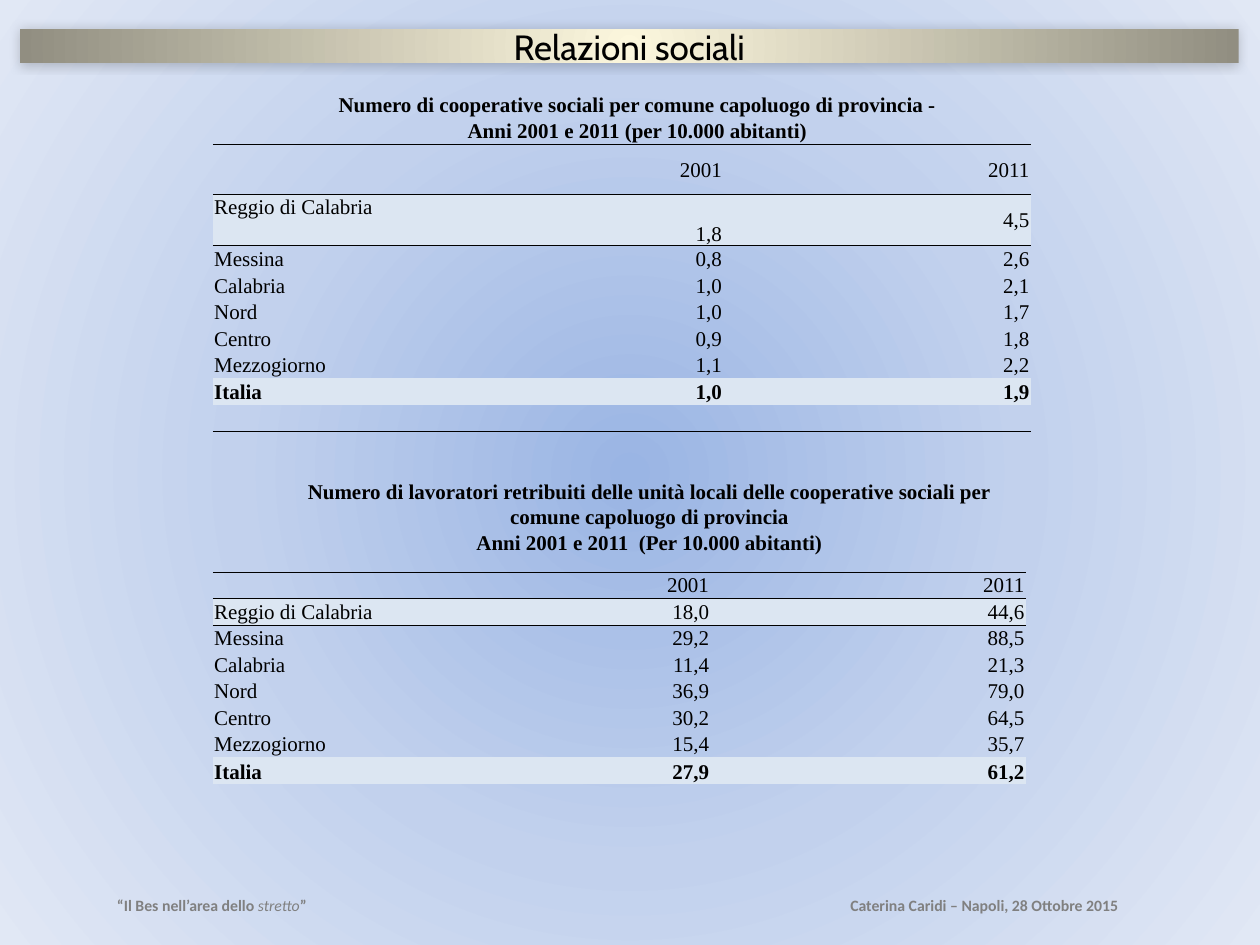
from lxml import etree
from pptx import Presentation
from pptx.dml.color import RGBColor
from pptx.enum.text import MSO_ANCHOR, MSO_AUTO_SIZE, PP_ALIGN
from pptx.oxml import parse_xml
from pptx.oxml.ns import nsdecls, qn
from pptx.util import Emu, Inches, Pt

COLORS = {"text": "000000", "footer": "808080", "highlight": "DCE6F2", "rule": "000000"}
BACKGROUND_STOPS = [(0, "9AB5E4"), (50, "C2D1ED"), (100, "E1E8F5")]
BANNER_STOPS = [(0, "FCF7DD"), (100, "918E81")]
WIDTH, HEIGHT = Inches(10), Inches(7.5)
ROW = Inches(0.21)
NO_GRID_STYLE = "{2D5ABB26-0587-4C30-8999-92F81FD0307C}"
TOP, MIDDLE, BOTTOM = MSO_ANCHOR.TOP, MSO_ANCHOR.MIDDLE, MSO_ANCHOR.BOTTOM

COOPERATIVES = [
    ("", "2001", "2011"),
    ("Reggio di Calabria", "1,8", "4,5"),
    ("Messina", "0,8", "2,6"),
    ("Calabria", "1,0", "2,1"),
    ("Nord", "1,0", "1,7"),
    ("Centro", "0,9", "1,8"),
    ("Mezzogiorno", "1,1", "2,2"),
    ("Italia", "1,0", "1,9"),
    ("", "", ""),
]
WORKERS = [
    ("", "2001", "2011"),
    ("Reggio di Calabria", "18,0", "44,6"),
    ("Messina", "29,2", "88,5"),
    ("Calabria", "11,4", "21,3"),
    ("Nord", "36,9", "79,0"),
    ("Centro", "30,2", "64,5"),
    ("Mezzogiorno", "15,4", "35,7"),
    ("Italia", "27,9", "61,2"),
]


def box(left, top, width, height):
    """Turn percentages of the slide into a box."""
    return (Emu(int(WIDTH * left / 100)), Emu(int(HEIGHT * top / 100)),
            Emu(int(WIDTH * width / 100)), Emu(int(HEIGHT * height / 100)))


def set_radial_fill(fill, properties, stops):
    """Swap a solid fill for a gradient that spreads from the centre."""
    fill.solid()
    marks = "".join(f'<a:gs pos="{share * 1000}"><a:srgbClr val="{color}"/></a:gs>'
                    for share, color in stops)
    gradient = parse_xml(
        f'<a:gradFill {nsdecls("a")} rotWithShape="1"><a:gsLst>{marks}</a:gsLst>'
        '<a:path path="circle"><a:fillToRect l="50000" t="50000" r="50000" b="50000"/>'
        '</a:path></a:gradFill>')
    properties.replace(properties.find(qn("a:solidFill")), gradient)


def add_run(paragraph, text, font, size, color="text", bold=False, italic=False):
    run = paragraph.add_run()
    run.text = text
    run.font.name, run.font.size = font, Pt(size)
    run.font.bold, run.font.italic = bold, italic
    run.font.color.rgb = RGBColor.from_string(COLORS[color])


def add_banner(slide, area, heading):
    banner = slide.shapes.title
    banner.left, banner.top, banner.width, banner.height = area
    properties = banner._element.spPr
    properties.append(parse_xml(
        f'<a:prstGeom {nsdecls("a")} prst="trapezoid"><a:avLst>'
        '<a:gd name="adj" fmla="val 20000"/></a:avLst></a:prstGeom>'))
    set_radial_fill(banner.fill, properties, BANNER_STOPS)
    banner.line.fill.background()
    properties.append(parse_xml(
        f'<a:effectLst {nsdecls("a")}><a:outerShdw blurRad="76200" dist="12700" dir="8100000">'
        '<a:srgbClr val="000000"><a:alpha val="20000"/></a:srgbClr></a:outerShdw></a:effectLst>'))
    frame = banner.text_frame
    frame.auto_size, frame.vertical_anchor = MSO_AUTO_SIZE.NONE, MIDDLE
    frame.margin_top = frame.margin_bottom = 0
    frame.paragraphs[0].alignment = PP_ALIGN.CENTER
    add_run(frame.paragraphs[0], heading, "Cabin", 20)


def add_text_frame(shapes, area):
    frame = shapes.add_textbox(*area).text_frame
    frame.word_wrap, frame.auto_size = True, MSO_AUTO_SIZE.SHAPE_TO_FIT_TEXT
    return frame


def add_caption(slide, area, lines):
    frame = add_text_frame(slide.shapes, area)
    for index, line in enumerate(lines):
        paragraph = frame.add_paragraph() if index else frame.paragraphs[0]
        paragraph.alignment = PP_ALIGN.CENTER
        add_run(paragraph, line, "Times New Roman", 12, bold=True)


def add_footer(slide, event_area, speaker_area):
    group = slide.shapes.add_group_shape()
    event = add_text_frame(group.shapes, event_area).paragraphs[0]
    for text, italic in (("“Il Bes nell’area dello ", False), ("stretto", True), ("”", False)):
        add_run(event, text, "Calibri", 9, "footer", bold=not italic, italic=italic)
    speaker = add_text_frame(group.shapes, speaker_area).paragraphs[0]
    add_run(speaker, "Caterina Caridi – Napoli, 28 Ottobre 2015", "Calibri", 9, "footer", bold=True)


def add_rule(cell, side):
    rule = parse_xml(f'<a:{side} {nsdecls("a")} w="6350"><a:solidFill>'
                     f'<a:srgbClr val="{COLORS["rule"]}"/></a:solidFill></a:{side}>')
    cell._tc.get_or_add_tcPr().insert(0, rule)


def fill_cell(cell, text, is_label, bold, highlighted, anchor):
    cell.margin_left = cell.margin_top = cell.margin_right = Inches(0.01)
    cell.margin_bottom = 0
    cell.vertical_anchor = anchor
    paragraph = cell.text_frame.paragraphs[0]
    paragraph.alignment = PP_ALIGN.LEFT if is_label else PP_ALIGN.RIGHT
    if text:
        add_run(paragraph, text, "Times New Roman", 12, bold=bold)
    else:
        etree.SubElement(paragraph._p, qn("a:endParaRPr"), sz="1200")
    if highlighted:
        cell.fill.solid()
        cell.fill.fore_color.rgb = RGBColor.from_string(COLORS["highlight"])
    else:
        cell.fill.background()


def add_statistics(slide, area, rows, column_shares, row_units=None, anchors=None):
    """Row units count text rows; anchors override single cells by (row, column)."""
    row_units, anchors = row_units or {}, anchors or {}
    frame = slide.shapes.add_table(len(rows), len(column_shares), *area)
    table = frame.table
    table.first_row = table.horz_banding = False
    table._tbl.tblPr.find(qn("a:tableStyleId")).text = NO_GRID_STYLE
    for column, share in zip(table.columns, column_shares):
        column.width = Emu(int(area[2] * share / 100))
    for r, values in enumerate(rows):
        table.rows[r].height = Emu(int(ROW * row_units.get(r, 1)))
        total = values[0] == "Italia"
        for c, value in enumerate(values):
            cell = table.cell(r, c)
            fill_cell(cell, value, c == 0, total, total or r == 1,
                      anchors.get((r, c), BOTTOM if total else MIDDLE))
            closes_table = r == len(rows) - 1 and not any(values)
            if r == 0 or closes_table:
                add_rule(cell, "lnB")
            if r < 2:
                add_rule(cell, "lnT")


def build_slide(presentation):
    slide = presentation.slides.add_slide(presentation.slide_layouts[5])
    fill = slide.background.fill
    fill.solid()
    set_radial_fill(fill, slide._element.find(".//" + qn("p:bgPr")), BACKGROUND_STOPS)

    add_banner(slide, box(1.6, 3.07, 96.7, 3.6), "Relazioni sociali")
    add_footer(slide, box(8.3, 94.13, 29.9, 3.33), box(66.5, 94.13, 27.6, 3.33))
    add_caption(slide, box(25.6, 9.07, 50, 6.67), [
        "Numero di cooperative sociali per comune capoluogo di provincia - "
        "Anni 2001 e 2011 (per 10.000 abitanti)"])
    add_statistics(slide, box(16.9, 15.33, 64.9, 30.4), COOPERATIVES, (29.2, 33.2, 37.6),
                   {0: 1.86, 1: 1.95}, {(1, 0): TOP, (1, 1): BOTTOM})
    add_caption(slide, box(23.2, 50, 56.7, 9.47), [
        "Numero di lavoratori retribuiti delle unità locali delle cooperative sociali per "
        "comune capoluogo di provincia",
        "Anni 2001 e 2011  (Per 10.000 abitanti)"])
    add_statistics(slide, box(16.9, 60.53, 64.5, 22.4), WORKERS, (33.6, 27.6, 38.8))


def main():
    presentation = Presentation()
    presentation.slide_width, presentation.slide_height = WIDTH, HEIGHT
    build_slide(presentation)
    presentation.save("out.pptx")


if __name__ == "__main__":
    main()
